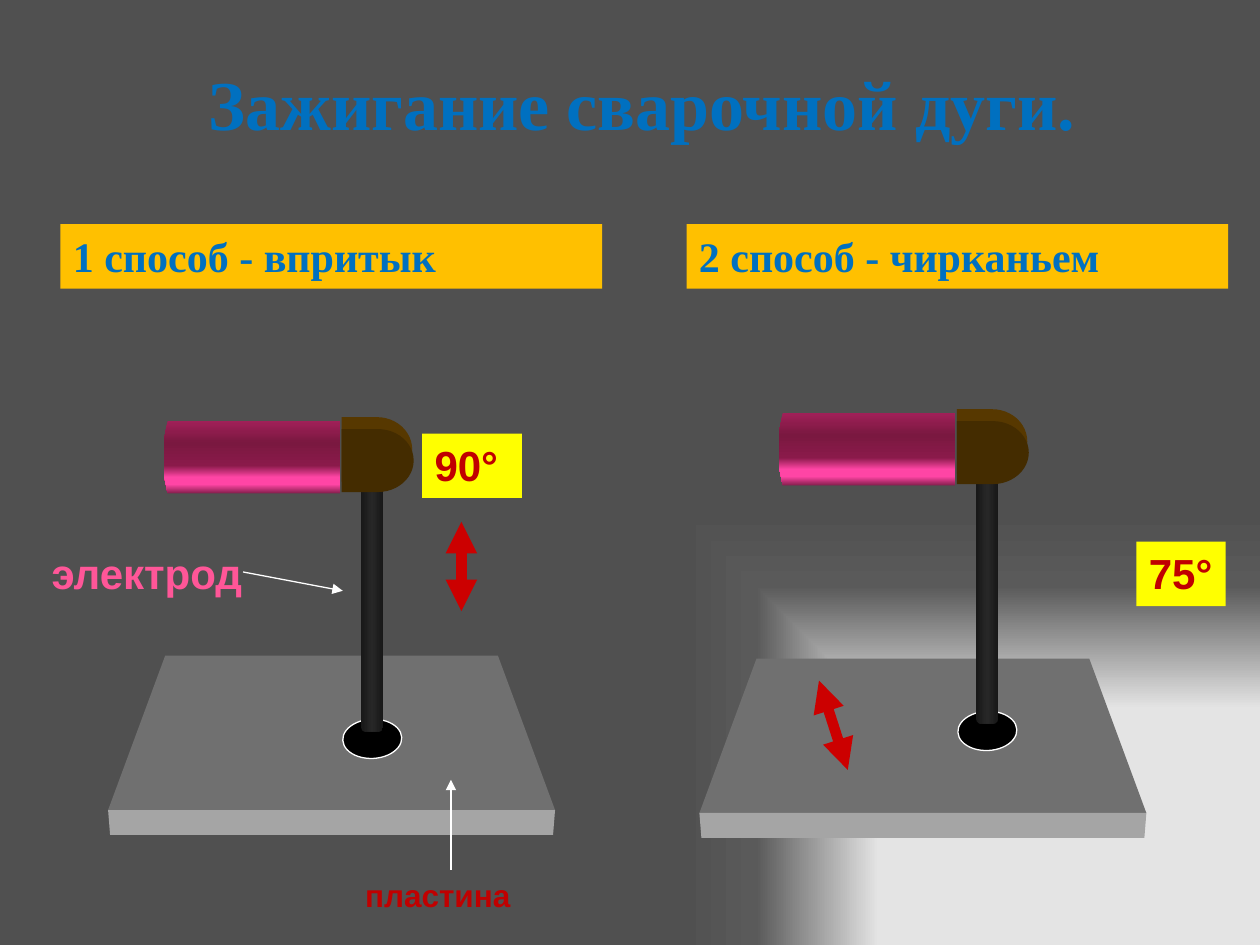
from lxml.etree import SubElement
from pptx import Presentation
from pptx.dml.color import RGBColor
from pptx.enum.shapes import MSO_CONNECTOR, MSO_SHAPE
from pptx.enum.text import MSO_ANCHOR, PP_ALIGN
from pptx.oxml.ns import qn
from pptx.util import Cm, Pt

BLUE = RGBColor(0x00, 0x70, 0xC0)
ORANGE = RGBColor(0xFF, 0xC0, 0x00)
YELLOW = RGBColor(0xFF, 0xFF, 0x00)
DARK_RED = RGBColor(0xC0, 0x00, 0x00)
ARROW_RED = RGBColor(0xCC, 0x00, 0x00)
PINK = RGBColor(0xFF, 0x56, 0x98)
WHITE = RGBColor(0xFF, 0xFF, 0xFF)
BLACK = RGBColor(0x00, 0x00, 0x00)
PLATE_TOP = RGBColor(0x70, 0x70, 0x70)
PLATE_FRONT = RGBColor(0xA5, 0xA5, 0xA5)
HOLDER_LIGHT = RGBColor(0x57, 0x38, 0x00)
HOLDER_DARK = RGBColor(0x44, 0x2C, 0x00)

# Gradient stops: (percent, colour)
BACKGROUND = [(50, "E4E4E4"), (76, "5A5A5A"), (92, "505050")]
HANDLE = [(0, "A02058"), (30, "7A1840"), (62, "8A1A4A"),
          (78, "FF45A5"), (88, "FF45A5"), (100, "8A2050")]
ROD = [(0, "181818"), (50, "272727"), (100, "181818")]

# Text, (left, top, width, height) in cm, format
SERIF = {"font": "Times New Roman", "color": BLUE}
TEXTS = [
    ("Зажигание сварочной дуги.", (1.19, 0.41, 23.5, 3.33),
     {**SERIF, "size": 40, "align": PP_ALIGN.CENTER, "anchor": MSO_ANCHOR.MIDDLE}),
    ("1 способ - впритык", (1.22, 4.52, 10.92, 1.3), {**SERIF, "fill": ORANGE}),
    ("2 способ - чирканьем", (13.84, 4.52, 10.92, 1.3), {**SERIF, "fill": ORANGE}),
    ("90°", (8.51, 8.74, 2.01, 1.3), {"fill": YELLOW}),
    ("75°", (22.91, 10.92, 1.8, 1.3), {"fill": YELLOW}),
    ("электрод", (0.79, 10.92, 4.5, 1.3), {"color": PINK}),
    ("пластина", (7.11, 17.53, 3.81, 1.02), {"size": 18}),
]

# Start, end, colour, width, whether both ends have heads
ARROWS = [
    ((9.3, 12.32), (9.3, 10.52), ARROW_RED, 6, True),
    ((17.09, 15.52), (16.51, 13.72), ARROW_RED, 6, True),
    ((4.9, 11.53), (6.91, 11.91), WHITE, 0.75, False),
    ((9.09, 17.53), (9.09, 15.72), WHITE, 0.75, False),
]

# Outlines of the first drawing; the second is the same, moved
PLATE_TOP_OUTLINE = [(3.33, 13.22), (10.04, 13.22), (11.19, 16.33), (2.18, 16.33)]
PLATE_FRONT_OUTLINE = [(2.18, 16.33), (11.19, 16.33), (11.15, 16.83), (2.22, 16.83)]
HANDLE_OUTLINE = [(3.38, 8.49), (6.86, 8.49), (6.86, 9.94),
                  (3.38, 9.94), (3.31, 9.6), (3.31, 8.85)]
# Plate offset, torch offset
DRAWINGS = [((0, 0), (0, 0)), ((11.92, 0.06), (12.4, -0.16))]


def set_stops(gradient, stops):
    stop_list = gradient.find(qn("a:gsLst"))
    for stop in list(stop_list):
        stop_list.remove(stop)
    for percent, color in stops:
        stop = SubElement(stop_list, qn("a:gs"), pos=str(percent * 1000))
        SubElement(stop, qn("a:srgbClr"), val=color)


def set_background(slide):
    """Gradient that spreads from the bottom right corner."""
    slide.background.fill.gradient()
    gradient = next(slide.element.iter(qn("a:gradFill")))
    set_stops(gradient, BACKGROUND)
    gradient.remove(gradient.find(qn("a:lin")))
    spread = SubElement(gradient, qn("a:path"), {"path": "rect"})
    SubElement(spread, qn("a:fillToRect"), l="100000", t="100000", r="0", b="0")


def paint(shape, fill, angle=0, line=None):
    """Fill with one colour, or with a list of gradient stops."""
    shape.shadow.inherit = False
    if isinstance(fill, list):
        shape.fill.gradient()
        shape.fill.gradient_angle = angle
        set_stops(shape.element.spPr.find(qn("a:gradFill")), fill)
    else:
        shape.fill.solid()
        shape.fill.fore_color.rgb = fill
    if line is None:
        shape.line.fill.background()
    else:
        shape.line.color.rgb = line
        shape.line.width = Pt(0.75)


def add_outline(slide, points, offset, fill, **style):
    moved = [(Cm(x + offset[0]), Cm(y + offset[1])) for x, y in points]
    builder = slide.shapes.build_freeform(*moved[0])
    builder.add_line_segments(moved[1:], close=True)
    paint(builder.convert_to_shape(), fill, **style)


def add_preset(slide, kind, box, offset, fill, **style):
    left, top, width, height = box
    shape = slide.shapes.add_shape(kind, Cm(left + offset[0]), Cm(top + offset[1]),
                                   Cm(width), Cm(height))
    paint(shape, fill, **style)
    return shape


def add_plate(slide, offset):
    add_outline(slide, PLATE_TOP_OUTLINE, offset, PLATE_TOP)
    add_outline(slide, PLATE_FRONT_OUTLINE, offset, PLATE_FRONT)


def add_torch(slide, offset):
    hole = add_preset(slide, MSO_SHAPE.OVAL, (6.91, 14.5, 1.19, 0.79), offset,
                      BLACK, line=WHITE)
    hole.rotation = -2.7
    rod = add_preset(slide, MSO_SHAPE.ROUNDED_RECTANGLE, (7.28, 9.8, 0.44, 4.95),
                     offset, ROD)
    rod.adjustments[0] = 0.2
    for box, color in [((6.89, 8.41, 1.42, 1.3), HOLDER_LIGHT),
                       ((6.89, 8.65, 1.45, 1.27), HOLDER_DARK)]:
        add_preset(slide, MSO_SHAPE.FLOWCHART_DELAY, box, offset, color)
    add_outline(slide, HANDLE_OUTLINE, offset, HANDLE, angle=270)


def add_text(slide, text, box, font="Arial", size=24, color=DARK_RED, fill=None,
             align=PP_ALIGN.LEFT, anchor=MSO_ANCHOR.TOP):
    shape = slide.shapes.add_textbox(*map(Cm, box))
    if fill is not None:
        paint(shape, fill)
    frame = shape.text_frame
    frame.word_wrap = True
    frame.vertical_anchor = anchor
    paragraph = frame.paragraphs[0]
    paragraph.alignment = align
    run = paragraph.add_run()
    run.text = text
    run.font.name = font
    run.font.size = Pt(size)
    run.font.bold = True
    run.font.color.rgb = color


def add_arrow(slide, start, end, color, width, both_ends):
    arrow = slide.shapes.add_connector(MSO_CONNECTOR.STRAIGHT,
                                       *map(Cm, start + end))
    arrow.line.color.rgb = color
    arrow.line.width = Pt(width)
    line = arrow.line._get_or_add_ln()
    for tag in ("a:headEnd", "a:tailEnd") if both_ends else ("a:tailEnd",):
        SubElement(line, qn(tag), type="triangle")
    SubElement(arrow.element.spPr, qn("a:effectLst"))


def main():
    presentation = Presentation()
    presentation.slide_width = Cm(25.4)
    presentation.slide_height = Cm(19.05)
    slide = presentation.slides.add_slide(presentation.slide_layouts[6])
    set_background(slide)
    for plate_offset, torch_offset in DRAWINGS:
        add_plate(slide, plate_offset)
        add_torch(slide, torch_offset)
    for text, box, style in TEXTS:
        add_text(slide, text, box, **style)
    for arrow in ARROWS:
        add_arrow(slide, *arrow)
    presentation.save("out.pptx")


if __name__ == "__main__":
    main()
